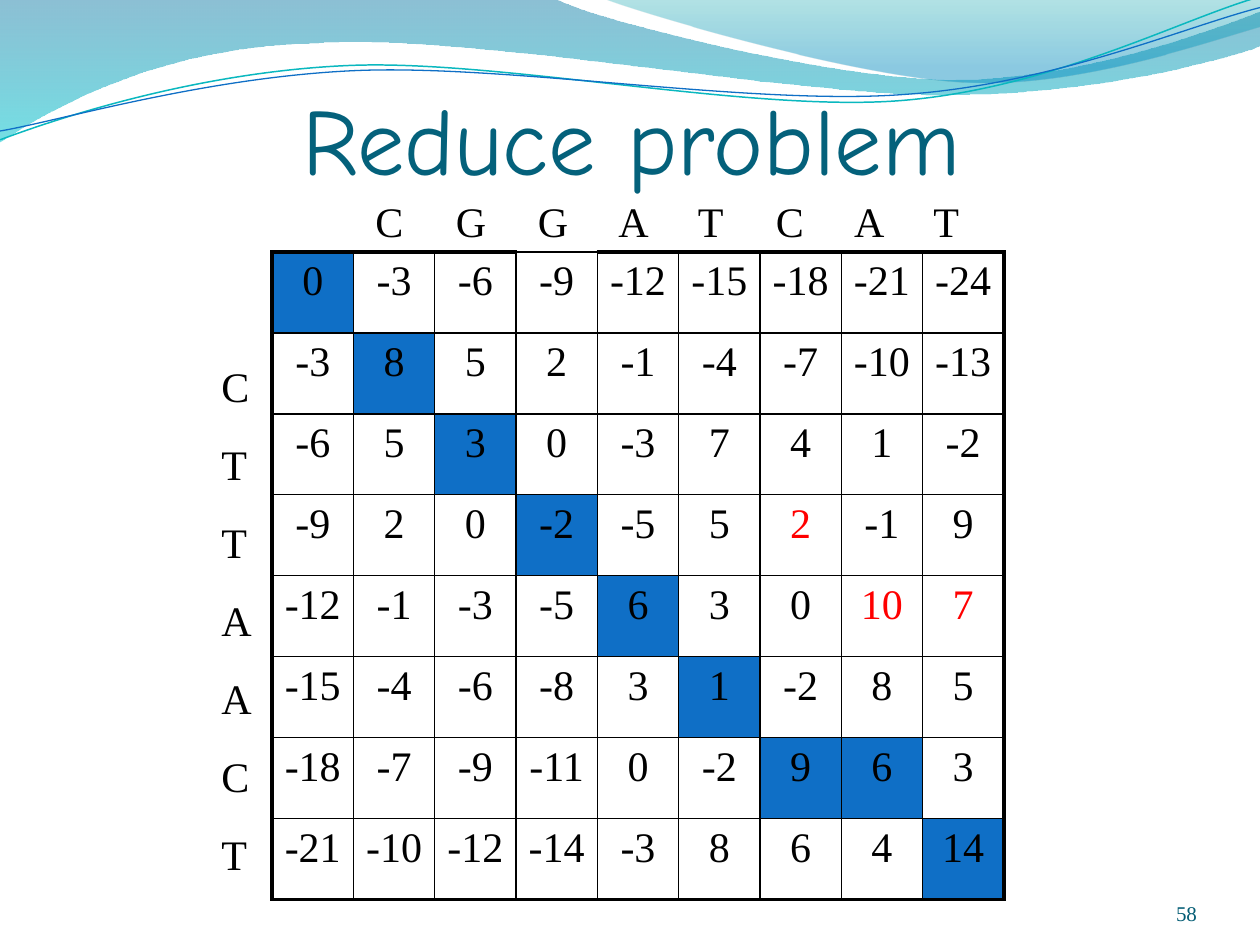
import math
from dataclasses import dataclass
from typing import Optional

from lxml import etree
from pptx import Presentation
from pptx import util as u
from pptx.dml import color
from pptx.enum import text
from pptx.oxml import ns

SERIF = "Times New Roman"
BLACK, RED, BLUE = "000000", "FF0000", "0F6FC6"
THIN, THICK = 1, 2.25
PIVOT = (4.99, 0.58)
LETTER_STOPS = (0.64, 1.29, 1.93, 2.56, 3.18, 3.8, 4.43)


@dataclass
class Stop:
    position: float
    hue: str
    opacity: int


@dataclass
class Ribbon:
    start: tuple
    segments: list
    stops: tuple = ()
    line: Optional[str] = None
    width: float = 0
    tilt: float = 0


RIBBONS = [
    Ribbon((0, 0), [
        (4.4, -0.01),
        (4.76, 0.17, 6.64, 0.63, 7.58, 0.63), (8.53, 0.63, 9.58, 0.26, 10, 0.09),
        (10.01, 0.36),
        (9.83, 0.44, 8.7, 0.76, 7.46, 0.75), (6.22, 0.75, 3.82, 0.28, 2.57, 0.34),
        (1.29, 0.36, 0.46, 0.83, -0.01, 1.13),
    ], stops=(Stop(0, "0074A1", 45), Stop(1, "00C6CF", 55))),
    Ribbon((4.79, -0.01), [
        (5.09, 0.11, 6.82, 0.62, 7.69, 0.65), (8.56, 0.69, 9.61, 0.32, 10, 0.21),
        (10, 0),
    ], stops=(Stop(0, "00A1A9", 30), Stop(0.8, "008BBF", 45))),
    Ribbon((0, 1.11), [
        (0.48, 0.93, 1.58, 0.57, 2.77, 0.52), (3.95, 0.47, 5.93, 0.89, 7.13, 0.8),
        (8.33, 0.71, 9.38, 0.15, 9.98, -0.02),
    ], line="0AB8BF", width=0.85, tilt=-2.7),
    Ribbon((0, 1.04), [
        (0.47, 0.96, 1.64, 0.61, 2.83, 0.56), (4.03, 0.51, 5.97, 0.84, 7.17, 0.75),
        (8.36, 0.67, 9.41, 0.21, 10, 0.06),
    ], line=BLUE, width=0.75, tilt=-2.7),
]

SCORES = [
    [0, -3, -6, -9, -12, -15, -18, -21, -24],
    [-3, 8, 5, 2, -1, -4, -7, -10, -13],
    [-6, 5, 3, 0, -3, 7, 4, 1, -2],
    [-9, 2, 0, -2, -5, 5, 2, -1, 9],
    [-12, -1, -3, -5, 6, 3, 0, 10, 7],
    [-15, -4, -6, -8, 3, 1, -2, 8, 5],
    [-18, -7, -9, -11, 0, -2, 9, 6, 3],
    [-21, -10, -12, -14, -3, 8, 6, 4, 14],
]
ALIGNED = {(step, step) for step in range(6)} | {(6, 6), (6, 7), (7, 8)}
MARKED = {(3, 6), (4, 7), (4, 8)}
PLAIN_TOP = (0, 3)


def rgb(value: str) -> color.RGBColor:
    return color.RGBColor.from_string(value)


def level(points: tuple, tilt: float) -> list:
    turn = math.radians(-tilt)
    result = []
    for x, y in zip(points[::2], points[1::2]):
        dx, dy = x - PIVOT[0], y - PIVOT[1]
        result.append((u.Inches(PIVOT[0] + dx * math.cos(turn) - dy * math.sin(turn)),
                       u.Inches(PIVOT[1] + dx * math.sin(turn) + dy * math.cos(turn))))
    return result


def bend(shape, segments: list) -> None:
    edges = list(shape.element.spPr.iter(ns.qn("a:lnTo")))
    for edge, points in zip(edges, segments):
        if len(points) == 3:
            edge.tag = ns.qn("a:cubicBezTo")
            edge.remove(edge[0])
            for x, y in points:
                etree.SubElement(edge, ns.qn("a:pt"),
                                 x=str(x - shape.left), y=str(y - shape.top))


def draw_ribbon(page, ribbon: Ribbon) -> None:
    start = level(ribbon.start, ribbon.tilt)[0]
    segments = [level(segment, ribbon.tilt) for segment in ribbon.segments]
    builder = page.shapes.build_freeform(*start)
    builder.add_line_segments([points[-1] for points in segments],
                              close=ribbon.line is None)
    shape = builder.convert_to_shape()
    bend(shape, segments)
    shape.rotation = ribbon.tilt
    shape.shadow.inherit = False
    if ribbon.line:
        shape.fill.background()
        shape.line.color.rgb = rgb(ribbon.line)
        shape.line.width = u.Pt(ribbon.width)
        return
    shape.line.fill.background()
    shape.fill.gradient()
    shape.fill.gradient_angle = 270
    for target, stop in zip(shape.fill.gradient_stops, ribbon.stops):
        target.position = stop.position
        target.color.rgb = rgb(stop.hue)
    tints = shape.element.spPr.iter(ns.qn("a:srgbClr"))
    for tint, stop in zip(list(tints), ribbon.stops):
        etree.SubElement(tint, ns.qn("a:alpha"), val=str(stop.opacity * 1000))


def write(frame, content: str, size=24, font=SERIF, hue=BLACK,
          align=text.PP_ALIGN.LEFT, spacing=None):
    para = frame.paragraphs[0]
    para.text = content
    para.alignment = align
    if spacing:
        para.line_spacing = u.Pt(spacing)
    for span in para.runs:
        span.font.size = u.Pt(size)
        span.font.name = font
        span.font.color.rgb = rgb(hue)
    return para


def add_label(page, place: tuple, content: str, insets=(0.1, 0.05, 0.1, 0.05),
              anchor=text.MSO_ANCHOR.TOP, **style):
    box = page.shapes.add_textbox(*map(u.Inches, place))
    frame = box.text_frame
    frame.word_wrap = True
    frame.vertical_anchor = anchor
    frame.margin_left, frame.margin_top, frame.margin_right, frame.margin_bottom = map(
        u.Inches, insets)
    return write(frame, content, **style)


def set_tabs(para, positions: tuple) -> None:
    stops = etree.SubElement(para._p.get_or_add_pPr(), ns.qn("a:tabLst"))
    for position in positions:
        etree.SubElement(stops, ns.qn("a:tab"), pos=str(u.Inches(position)), algn="l")


def set_borders(cell, widths: dict) -> None:
    properties = cell._tc.get_or_add_tcPr()
    for side, width in widths.items():
        line = etree.SubElement(properties, ns.qn(f"a:ln{side}"), w=str(u.Pt(width)))
        fill = etree.SubElement(line, ns.qn("a:solidFill"))
        etree.SubElement(fill, ns.qn("a:srgbClr"), val=BLACK)


def draw_scores(page, left: float, top: float, width: float, height: float) -> None:
    rows, columns = len(SCORES), len(SCORES[0])
    table = page.shapes.add_table(
        rows, columns, *map(u.Inches, (left, top, width, height))).table
    table.first_row = table.horz_banding = False
    for row, scores in enumerate(SCORES):
        for column, score in enumerate(scores):
            cell, spot = table.cell(row, column), (row, column)
            cell.margin_left = cell.margin_right = u.Inches(0.05)
            write(cell.text_frame, str(score), hue=RED if spot in MARKED else BLACK,
                  align=text.PP_ALIGN.CENTER)
            edges = {"L": column == 0, "R": column == columns - 1,
                     "T": row == 0 and spot != PLAIN_TOP, "B": row == rows - 1}
            set_borders(cell, {side: THICK if outer else THIN
                               for side, outer in edges.items()})
            if spot in ALIGNED:
                cell.fill.solid()
                cell.fill.fore_color.rgb = rgb(BLUE)
            else:
                cell.fill.background()


def main() -> None:
    deck = Presentation()
    deck.slide_width, deck.slide_height = u.Inches(10), u.Inches(7.5)
    page = deck.slides.add_slide(deck.slide_layouts[6])
    for ribbon in RIBBONS:
        draw_ribbon(page, ribbon)
    add_label(page, (8.67, 6.95, 0.83, 0.4), "58", insets=(0, 0, 0, 0), size=12,
              hue="045D75", anchor=text.MSO_ANCHOR.BOTTOM, align=text.PP_ALIGN.RIGHT)
    draw_scores(page, 2.16, 2, 5.81, 5.14)
    across = add_label(page, (2.88, 1.5, 5.28, 0.5), "\t".join("CGGATCAT"))
    set_tabs(across, LETTER_STOPS)
    add_label(page, (1.66, 2.59, 0.56, 4.44), "\n".join("CTTAACT"), spacing=44.6)
    add_label(page, (0.51, 0.29, 9, 1.25), "Reduce problem", insets=(0, 0.05, 0, 0),
              size=54, font="Comic Neue", hue="04617B",
              anchor=text.MSO_ANCHOR.BOTTOM, align=text.PP_ALIGN.CENTER)
    deck.save("out.pptx")


if __name__ == "__main__":
    main()
